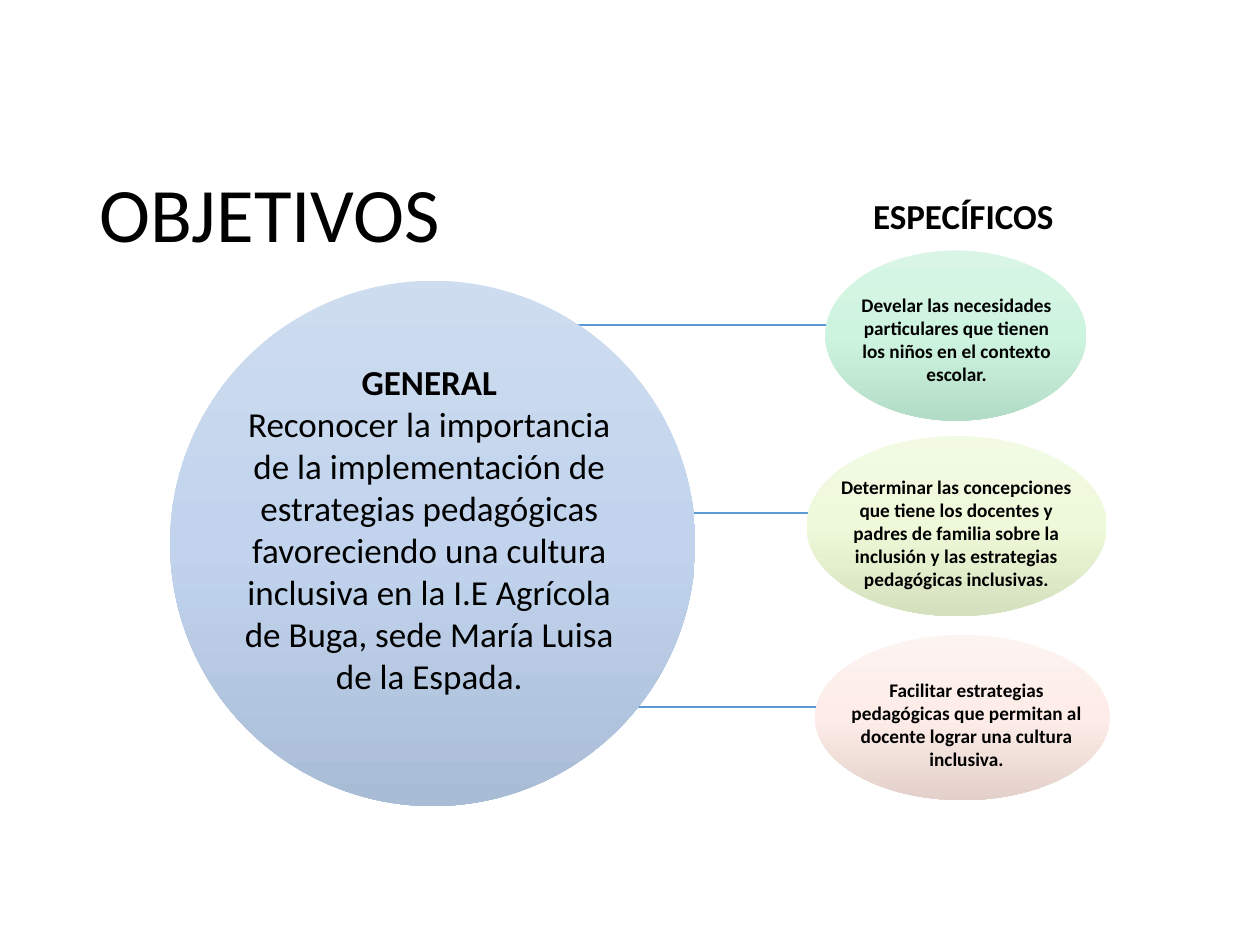
from copy import deepcopy
from dataclasses import dataclass

from lxml.etree import SubElement
from pptx import Presentation
from pptx.dml.color import RGBColor as RGB
from pptx.enum.shapes import MSO_CONNECTOR as Link, MSO_SHAPE as Shape
from pptx.enum.text import MSO_ANCHOR as Anchor, MSO_AUTO_SIZE as Fit, PP_ALIGN as Align
from pptx.oxml.ns import qn
from pptx.util import Cm, Pt


@dataclass(frozen=True)
class Theme:
    font: str = "Calibri"
    ink: str = "000000"
    line: str = "5B9BD5"
    blue: tuple = ("CEDCEF", "C2D4ED", "A9BCD6")
    mint: tuple = ("D8F5E5", "CDF4DF", "B3DCC6")
    lime: tuple = ("F2FAE4", "EEF9D9", "D5E0BE")
    rose: tuple = ("FDF4F1", "FDECE7", "E3D0CA")
    title: int = 44
    body: int = 20
    small: int = 11


class Board:
    def __init__(self, slide, theme):
        self.slide, self.theme = slide, theme

    def rule(self, left, right, y):
        """Draw a level line from left to right."""
        line = self.slide.shapes.add_connector(
            Link.STRAIGHT, Cm(left), Cm(y), Cm(right), Cm(y))
        line.line.color.rgb = RGB.from_string(self.theme.line)
        line.line.width = Pt(1)
        SubElement(line._element.spPr, qn("a:effectLst"))

    def oval(self, area, tones):
        """Draw an ellipse shaded downwards through three tones."""
        oval = self.slide.shapes.add_shape(Shape.OVAL, *map(Cm, area))
        oval.shadow.inherit = False
        oval.line.fill.background()
        oval.fill.gradient()
        oval.fill.gradient_angle = 270
        first = oval._element.spPr.find(".//" + qn("a:gs"))
        first.addnext(deepcopy(first))
        for i, (stop, tone) in enumerate(zip(oval.fill.gradient_stops, tones)):
            stop.position = i / 2
            stop.color.rgb = RGB.from_string(tone)

    def text(self, area, words, size, bold=True, align=Align.CENTER,
             anchor=Anchor.TOP, space=1.0, fit=Fit.SHAPE_TO_FIT_TEXT):
        frame = self.slide.shapes.add_textbox(*map(Cm, area)).text_frame
        frame.text = words
        frame.word_wrap = True
        frame.auto_size = fit
        frame.vertical_anchor = anchor
        for par in frame.paragraphs:
            par.alignment = align
            par.line_spacing = space
            for run in par.runs:
                font = run.font
                font.name, font.size, font.bold = self.theme.font, Pt(size), bold
                font.color.rgb = RGB.from_string(self.theme.ink)
        return frame

    def head(self, area, words, size, bold, anchor):
        self.text(area, words, size, bold, Align.LEFT, anchor, 0.9, Fit.NONE)


def main():
    deck = Presentation()
    deck.slide_width, deck.slide_height = Cm(25.4), Cm(19.05)
    theme = Theme()
    board = Board(deck.slides.add_slide(deck.slide_layouts[6]), theme)

    goals = [
        ((16.64, 5.05, 5.26, 3.43), theme.mint, (17.09, 5.79, 4.39, 2.64),
         "Develar las necesidades particulares que tienen los niños en el "
         "contexto escolar."),
        ((16.26, 8.79, 6.05, 3.63), theme.lime, (16.69, 9.45, 5.18, 2.62),
         "Determinar las concepciones que tiene los docentes y padres de "
         "familia sobre la inclusión y las estrategias pedagógicas inclusivas."),
        ((16.43, 12.8, 5.94, 3.33), theme.rose, (16.69, 13.54, 5.59, 2.13),
         "Facilitar estrategias pedagógicas que permitan al docente lograr "
         "una cultura inclusiva."),
    ]

    for left, right, y in ((8.66, 19.33, 14.25), (8.84, 17.96, 10.34),
                           (8.66, 19.3, 6.55)):
        board.rule(left, right, y)
    board.oval((3.43, 5.66, 10.59, 10.59), theme.blue)
    for area, tones, _, _ in goals:
        board.oval(area, tones)

    board.head((1.75, 2.54, 21.89, 3.68), "OBJETIVOS", theme.title, False,
               Anchor.MIDDLE)
    board.head((17.35, 2.62, 7.5, 2.29), "ESPECÍFICOS", theme.body, True,
               Anchor.BOTTOM)
    main_goal = board.text(
        (4.45, 7.14, 8.41, 7.95),
        "GENERAL\nReconocer la importancia de la implementación de estrategias "
        "pedagógicas favoreciendo una cultura inclusiva en la I.E Agrícola de "
        "Buga, sede María Luisa de la Espada.", theme.body, False)
    main_goal.paragraphs[0].runs[0].font.bold = True
    for _, _, area, words in goals:
        board.text(area, words, theme.small)

    deck.save("out.pptx")


if __name__ == "__main__":
    main()
